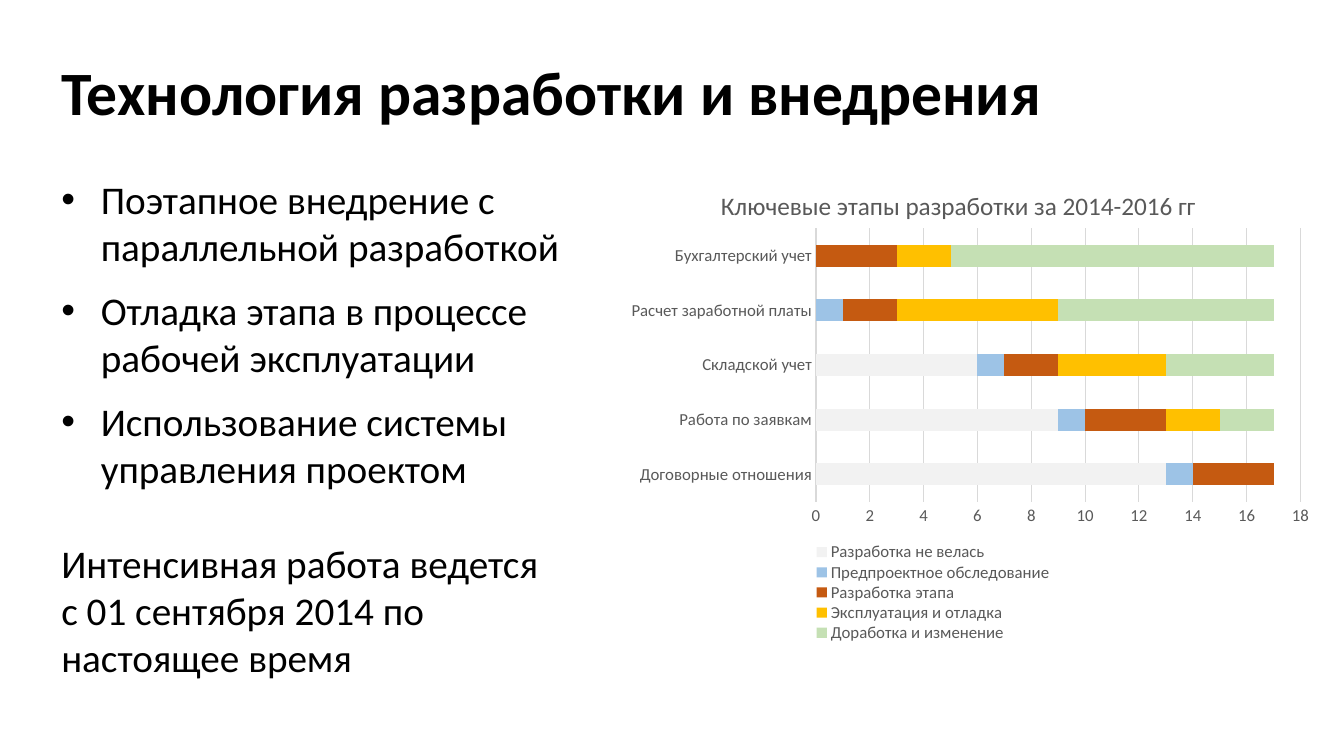
"""Build the slide on development and rollout stages with a stacked bar chart."""
from dataclasses import dataclass

from lxml import etree
from pptx import Presentation
from pptx import util as u
from pptx.chart import data as cd
from pptx.dml.color import RGBColor
from pptx.enum import chart as ch
from pptx.enum import text as tx
from pptx.oxml import ns

FONT = "Calibri"
BLACK = RGBColor(0x00, 0x00, 0x00)
GREY = RGBColor(0x59, 0x59, 0x59)
GRID = RGBColor(0xD9, 0xD9, 0xD9)
LEFT, COLUMN_W = 0.51, 5.23


@dataclass(frozen=True)
class Stage:
    name: str
    months: tuple[int, ...]
    color: RGBColor


MODULES = ("Договорные отношения", "Работа по заявкам", "Складской учет",
           "Расчет заработной платы", "Бухгалтерский учет")
STAGES = (
    Stage("Разработка не велась", (13, 9, 6, 0, 0), RGBColor(0xF2, 0xF2, 0xF2)),
    Stage("Предпроектное обследование", (1, 1, 1, 1, 0), RGBColor(0x9D, 0xC3, 0xE6)),
    Stage("Разработка этапа", (3, 3, 2, 2, 3), RGBColor(0xC5, 0x5A, 0x11)),
    Stage("Эксплуатация и отладка", (0, 2, 4, 6, 2), RGBColor(0xFF, 0xC0, 0x00)),
    Stage("Доработка и изменение", (0, 2, 4, 8, 12), RGBColor(0xC5, 0xE0, 0xB4)),
)
BULLETS = ("Поэтапное внедрение с параллельной разработкой",
           "Отладка этапа в процессе рабочей эксплуатации",
           "Использование системы управления проектом")
PERIOD = ("Интенсивная работа ведется", "с 01 сентября 2014 по настоящее время")


def format_font(font, size: float, color: RGBColor, bold: bool = False) -> None:
    font.name, font.size, font.bold = FONT, u.Pt(size), bold
    font.color.rgb = color


def place(sp, left: float, top: float, width: float, height: float) -> None:
    sp.left, sp.top = u.Inches(left), u.Inches(top)
    sp.width, sp.height = u.Inches(width), u.Inches(height)


def write(tf, lines: tuple[str, ...], *, size: float = 28, color: RGBColor = BLACK,
          bold: bool = False, bullet: str = "", indent: float = 0, gap: float = 0,
          spacing: float = 1.0, anchor=tx.MSO_ANCHOR.TOP) -> None:
    tf.word_wrap, tf.auto_size = True, tx.MSO_AUTO_SIZE.NONE
    tf.vertical_anchor = anchor
    for i, line in enumerate(lines):
        p = tf.add_paragraph() if i else tf.paragraphs[0]
        p.alignment, p.line_spacing = tx.PP_ALIGN.LEFT, spacing
        p.space_before, p.space_after = u.Pt(gap if i else 0), u.Pt(gap)
        if bullet:
            pPr = p._p.get_or_add_pPr()
            pPr.set("marL", str(u.Inches(indent)))
            pPr.set("indent", str(-u.Inches(indent)))
            etree.SubElement(pPr, ns.qn("a:buFont")).set("typeface", "Arial")
            etree.SubElement(pPr, ns.qn("a:buChar")).set("char", bullet)
        r = p.add_run()
        r.text = line
        format_font(r.font, size, color, bold)


def make_layout(x: float, y: float, w: float, h: float, inner: bool = False):
    layout = etree.Element(ns.qn("c:layout"))
    manual = etree.SubElement(layout, ns.qn("c:manualLayout"))
    values = {"layoutTarget": "inner"} if inner else {}
    values |= {"xMode": "edge", "yMode": "edge", "x": x, "y": y, "w": w, "h": h}
    for tag, value in values.items():
        etree.SubElement(manual, ns.qn(f"c:{tag}")).set("val", str(value))
    return layout


def set_layout(parent, layout, after: str = "") -> None:
    for old in parent.findall(ns.qn("c:layout")):
        parent.remove(old)
    if after:
        parent.find(ns.qn(after)).addnext(layout)
    else:
        parent.insert(0, layout)


def format_axis(axis) -> None:
    axis.major_tick_mark = axis.minor_tick_mark = ch.XL_TICK_MARK.NONE
    format_font(axis.tick_labels.font, 12, GREY)


def add_stage_chart(s) -> None:
    data = cd.CategoryChartData(number_format="General")
    data.categories = MODULES
    for stage in STAGES:
        data.add_series(stage.name, stage.months)
    chart = s.shapes.add_chart(
        ch.XL_CHART_TYPE.BAR_STACKED, u.Inches(5.94), u.Inches(1.67),
        u.Inches(7.13), u.Inches(5.01), data).chart
    format_font(chart.font, 10, BLACK)
    chart.has_title = True
    write_title = chart.chart_title.text_frame.paragraphs[0].add_run()
    write_title.text = "Ключевые этапы разработки за 2014-2016 гг"
    format_font(write_title.font, 18, GREY)
    chart.chart_title.include_in_layout = False

    plot = chart.plots[0]
    plot.gap_width, plot.overlap, plot.vary_by_categories = 150, 100, False
    for series, stage in zip(plot.series, STAGES):
        series.format.fill.solid()
        series.format.fill.fore_color.rgb = stage.color

    cat, val = chart.category_axis, chart.value_axis
    format_axis(cat)
    format_axis(val)
    val.minimum_scale, val.maximum_scale, val.major_unit = 0, 18, 2
    val.format.line.fill.background()
    val.has_major_gridlines = True
    for line in (cat.format.line, val.major_gridlines.format.line):
        line.color.rgb, line.width = GRID, u.Pt(0.75)

    chart.has_legend = True
    legend = chart.legend
    legend.position = ch.XL_LEGEND_POSITION.BOTTOM
    legend.include_in_layout = False
    format_font(legend.font, 12, GREY)
    set_layout(legend._element, make_layout(0.29, 0.74, 0.35, 0.2), "c:legendPos")
    plot_area = chart._chartSpace.chart.plotArea
    set_layout(plot_area, make_layout(0.302, 0.119, 0.674, 0.541, inner=True))


def main() -> None:
    prs = Presentation()
    prs.slide_width, prs.slide_height = u.Inches(13.33), u.Inches(7.5)
    s = prs.slides.add_slide(prs.slide_layouts[1])

    title, body = s.shapes.title, s.placeholders[1]
    place(title, LEFT, 0.22, 12.28, 1.45)
    write(title.text_frame, ("Технология разработки и внедрения",), size=44,
          bold=True, spacing=0.9, anchor=tx.MSO_ANCHOR.MIDDLE)
    place(body, LEFT, 1.69, COLUMN_W, 3.49)
    write(body.text_frame, BULLETS, bullet="•", indent=0.39, gap=6)

    add_stage_chart(s)

    period = s.shapes.add_textbox(u.Inches(LEFT), u.Inches(5.3),
                                  u.Inches(COLUMN_W), u.Inches(1.51))
    write(period.text_frame, PERIOD)
    prs.save("out.pptx")


if __name__ == "__main__":
    main()
